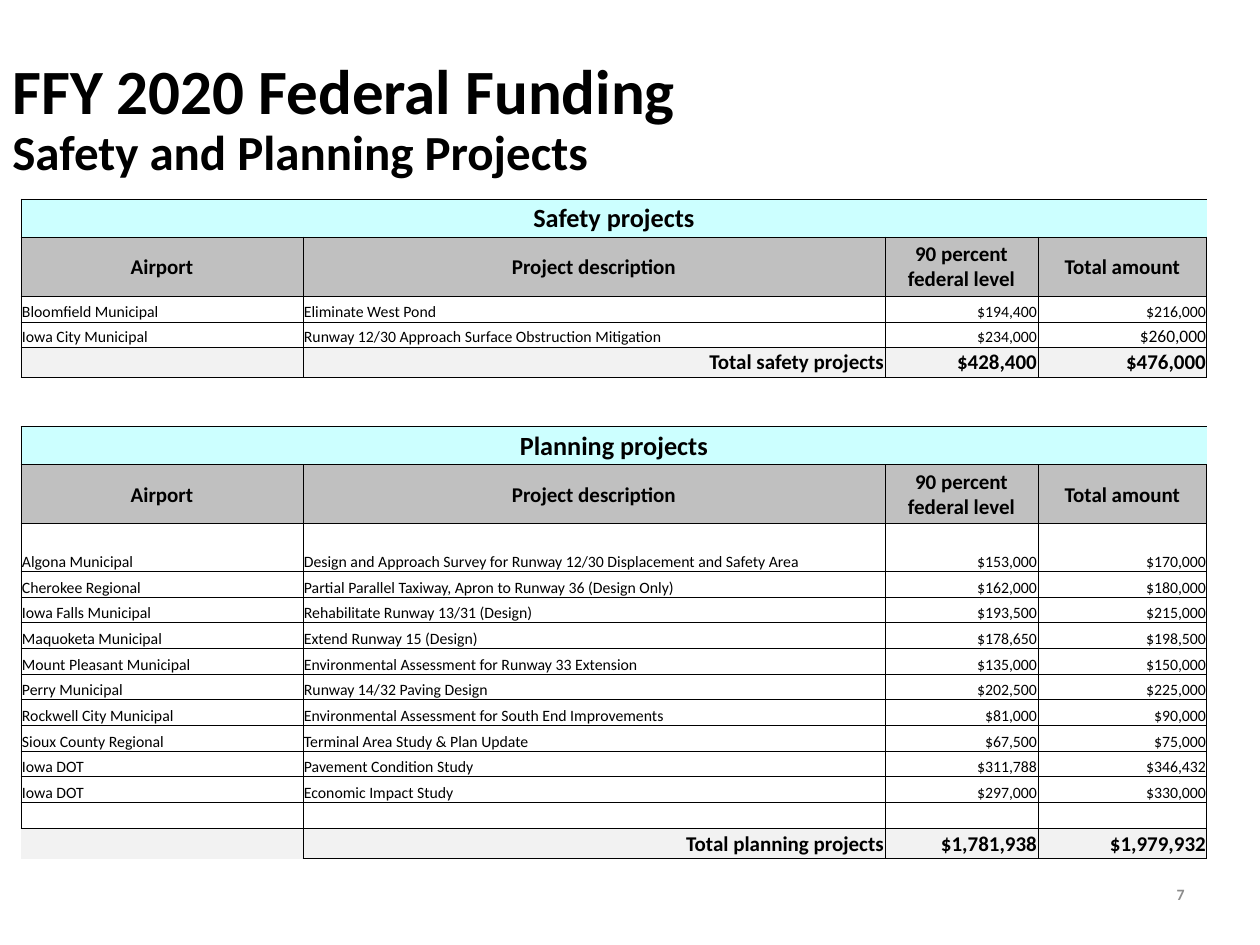
from dataclasses import dataclass
from itertools import cycle

from lxml import etree
from pptx import Presentation
from pptx import util as u
from pptx.dml.color import RGBColor
from pptx.enum import text
from pptx.oxml import ns


@dataclass(frozen=True)
class Theme:
    """Colours, font and type sizes of the slide."""
    font: str = "Calibri"
    ink: str = "000000"
    muted: str = "8C8C8C"
    band: str = "CCFFFF"
    header: str = "C0C0C0"
    total: str = "F2F2F2"
    title_size: int = 36
    subtitle_size: int = 28
    band_size: int = 15
    strong_size: int = 12
    large_amount_size: int = 10
    body_size: int = 9
    rule_width: float = 0.5


THEME = Theme()
PX_PER_INCH = 126
LEFT, CENTER, RIGHT = text.PP_ALIGN.LEFT, text.PP_ALIGN.CENTER, text.PP_ALIGN.RIGHT
MIDDLE, BOTTOM = text.MSO_ANCHOR.MIDDLE, text.MSO_ANCHOR.BOTTOM

COLUMN_WIDTHS = (282, 582, 153, 169)
COLUMN_ALIGNS = (LEFT, LEFT, RIGHT, RIGHT)
BAND_HEIGHT, HEADER_HEIGHT, TOTAL_HEIGHT, GAP_HEIGHT = 38, 59, 30, 50
FIRST_PLANNING_HEIGHT = 48
PROJECT_HEIGHTS = (26, 25, 26)

HEADINGS = ("Airport", "Project description", "90 percent federal level", "Total amount")
SAFETY = (
    ("Bloomfield Municipal", "Eliminate West Pond", "$194,400", "$216,000"),
    ("Iowa City Municipal", "Runway 12/30 Approach Surface Obstruction Mitigation",
     "$234,000", "$260,000"),
)
SAFETY_TOTAL = ("", "Total safety projects", "$428,400", "$476,000")
PLANNING = (
    ("Algona Municipal",
     "Design and Approach Survey for Runway 12/30 Displacement and Safety Area",
     "$153,000", "$170,000"),
    ("Cherokee Regional", "Partial Parallel Taxiway, Apron to Runway 36 (Design Only)",
     "$162,000", "$180,000"),
    ("Iowa Falls Municipal", "Rehabilitate Runway 13/31 (Design)", "$193,500", "$215,000"),
    ("Maquoketa Municipal", "Extend Runway 15 (Design)", "$178,650", "$198,500"),
    ("Mount Pleasant Municipal", "Environmental Assessment for Runway 33 Extension",
     "$135,000", "$150,000"),
    ("Perry Municipal", "Runway 14/32 Paving Design", "$202,500", "$225,000"),
    ("Rockwell City Municipal", "Environmental Assessment for South End Improvements",
     "$81,000", "$90,000"),
    ("Sioux County Regional", "Terminal Area Study & Plan Update", "$67,500", "$75,000"),
    ("Iowa DOT", "Pavement Condition Study", "$311,788", "$346,432"),
    ("Iowa DOT", "Economic Impact Study", "$297,000", "$330,000"),
    ("", "", "", ""),
)
PLANNING_TOTAL = ("", "Total planning projects", "$1,781,938", "$1,979,932")


def px(length):
    """Turn whole pixels into EMU."""
    return u.Emu(round(length * u.Inches(1) / PX_PER_INCH))


def write(paragraph, words, *, size, bold=False, color=THEME.ink, align=LEFT):
    """Add formatted words to a paragraph."""
    paragraph.alignment = align
    if not words:
        etree.SubElement(paragraph._p, ns.qn("a:endParaRPr"), sz=str(size * 100))
        return
    run = paragraph.add_run()
    run.text = words
    run.font.name = THEME.font
    run.font.size = u.Pt(size)
    run.font.bold = bold
    run.font.color.rgb = RGBColor.from_string(color)


def add_text_frame(slide, left, top, width, height):
    """Add a wrapping, vertically centred text box and return its frame."""
    frame = slide.shapes.add_textbox(px(left), px(top), px(width), px(height)).text_frame
    frame.word_wrap = True
    frame.vertical_anchor = MIDDLE
    return frame


def add_title(slide):
    """Add the two-line title."""
    title = add_text_frame(slide, 0, 42, 1207, 157).paragraphs[0]
    title.line_spacing = 0.9
    write(title, "FFY 2020 Federal Funding", size=THEME.title_size, bold=True)
    title.add_line_break()
    write(title, "Safety and Planning Projects", size=THEME.subtitle_size, bold=True)


def add_page_number(slide):
    """Add the page number at the lower right."""
    number = add_text_frame(slide, 903, 861, 294, 66).paragraphs[0]
    write(number, "7", size=THEME.body_size, bold=True, color=THEME.muted, align=RIGHT)


def set_borders(cell, sides):
    """Rule the named sides of a cell and clear the others."""
    properties = cell._tc.get_or_add_tcPr()
    for side in "LRTB":
        line = etree.SubElement(properties, ns.qn(f"a:ln{side}"), w=str(u.Pt(THEME.rule_width)))
        if side in sides:
            paint = etree.SubElement(line, ns.qn("a:solidFill"))
            etree.SubElement(paint, ns.qn("a:srgbClr"), val=THEME.ink)
        else:
            etree.SubElement(line, ns.qn("a:noFill"))


def fill_cell(cell, words, *, fill=None, sides="LRTB", anchor=MIDDLE, **text_format):
    """Give a cell its borders, fill, margins and words."""
    set_borders(cell, sides)
    if fill:
        cell.fill.solid()
        cell.fill.fore_color.rgb = RGBColor.from_string(fill)
    else:
        cell.fill.background()
    cell.margin_left = cell.margin_right = cell.margin_top = px(1)
    cell.margin_bottom = 0
    cell.vertical_anchor = anchor
    write(cell.text_frame.paragraphs[0], words, **text_format)


def fill_row(row, height, values, aligns, **cell_format):
    """Set a row's height and fill its cells."""
    row.height = px(height)
    for cell, words, align in zip(row.cells, values, aligns):
        fill_cell(cell, words, align=align, **cell_format)


def fill_heading(rows, band):
    """Fill the coloured band and the column headings of a section."""
    centered = (CENTER,) * 4
    band_row = next(rows)
    fill_row(band_row, BAND_HEIGHT, (band, "", "", ""), centered, fill=THEME.band,
             sides="LTB", size=THEME.band_size, bold=True)
    band_row.cells[0].merge(band_row.cells[3])
    fill_row(next(rows), HEADER_HEIGHT, HEADINGS, centered, fill=THEME.header,
             size=THEME.strong_size, bold=True)


def fill_section(rows, band, projects, total, first_heights=()):
    """Fill one section: band, headings, projects and total."""
    fill_heading(rows, band)
    remaining = len(projects) - len(first_heights)
    heights = [*first_heights, *(h for h, _ in zip(cycle(PROJECT_HEIGHTS), range(remaining)))]
    for height, project in zip(heights, projects):
        fill_row(next(rows), height, project, COLUMN_ALIGNS, anchor=BOTTOM,
                 size=THEME.body_size)
    fill_row(next(rows), TOTAL_HEIGHT, total, (RIGHT,) * 4, fill=THEME.total,
             size=THEME.strong_size, bold=True)


def add_projects_table(slide):
    """Add the table holding both project sections."""
    row_count = len(SAFETY) + len(PLANNING) + 7
    table = slide.shapes.add_table(row_count, 4, px(21), px(199),
                                   px(sum(COLUMN_WIDTHS)), px(661)).table
    table.first_row = table.horz_banding = False
    for column, width in zip(table.columns, COLUMN_WIDTHS):
        column.width = px(width)
    rows = iter(table.rows)
    fill_section(rows, "Safety projects", SAFETY, SAFETY_TOTAL)
    fill_row(next(rows), GAP_HEIGHT, ("",) * 4, COLUMN_ALIGNS, sides="TB",
             size=THEME.body_size)
    fill_section(rows, "Planning projects", PLANNING, PLANNING_TOTAL,
                 (FIRST_PLANNING_HEIGHT,))
    large_amount = table.cell(1 + len(SAFETY), 3).text_frame.paragraphs[0]
    large_amount.runs[0].font.size = u.Pt(THEME.large_amount_size)
    open_corner = table.cell(row_count - 1, 0)._tc.tcPr
    for side in "LB":
        line = open_corner.find(ns.qn(f"a:ln{side}"))
        line.replace(line[0], etree.Element(ns.qn("a:noFill")))


def main():
    """Build and save the slide."""
    deck = Presentation()
    deck.slide_width, deck.slide_height = px(1260), px(945)
    slide = deck.slides.add_slide(deck.slide_layouts[6])
    add_title(slide)
    add_projects_table(slide)
    add_page_number(slide)
    deck.save("out.pptx")


if __name__ == "__main__":
    main()
